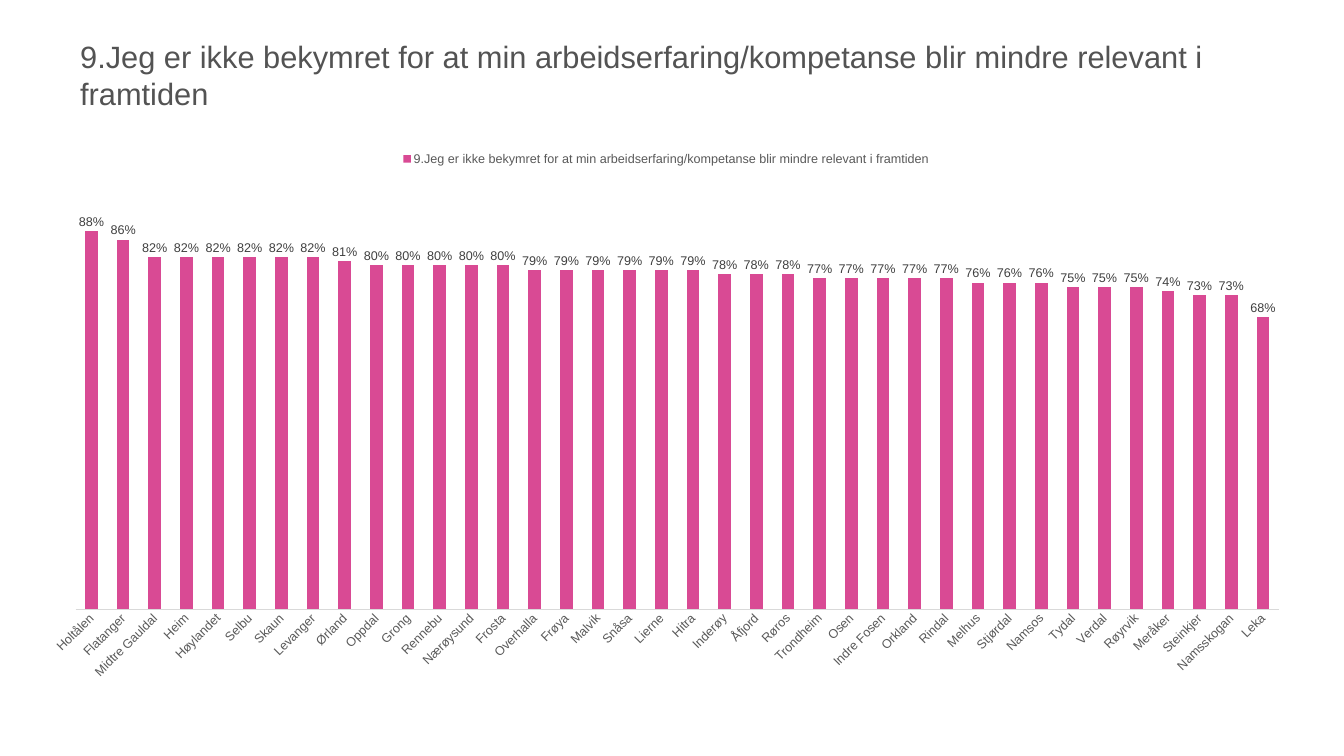
from pptx import Presentation
from pptx.chart.data import CategoryChartData
from pptx.dml.color import RGBColor
from pptx.enum.chart import (XL_CHART_TYPE, XL_LABEL_POSITION,
                             XL_LEGEND_POSITION, XL_TICK_MARK)
from pptx.enum.text import MSO_ANCHOR
from pptx.util import Inches, Pt

WIDTH, HEIGHT = 26.67, 15
COLORS = {"title": "535353", "text": "595959", "label": "404040",
          "axis": "D9D9D9", "bar": "D94A94", "base": "000000"}
TITLE = ("9.Jeg er ikke bekymret for at min arbeidserfaring/kompetanse "
         "blir mindre relevant i framtiden")
# Towns grouped by their share in percent
SHARES = {
    88: ["Holtålen"],
    86: ["Flatanger"],
    82: ["Midtre Gauldal", "Heim", "Høylandet", "Selbu", "Skaun", "Levanger"],
    81: ["Ørland"],
    80: ["Oppdal", "Grong", "Rennebu", "Nærøysund", "Frosta"],
    79: ["Overhalla", "Frøya", "Malvik", "Snåsa", "Lierne", "Hitra"],
    78: ["Inderøy", "Åfjord", "Røros"],
    77: ["Trondheim", "Osen", "Indre Fosen", "Orkland", "Rindal"],
    76: ["Melhus", "Stjørdal", "Namsos"],
    75: ["Tydal", "Verdal", "Røyrvik"],
    74: ["Meråker"],
    73: ["Steinkjer", "Namsskogan"],
    68: ["Leka"],
}


class Deck:
    face = "Arial"

    def __init__(self, slide):
        self.slide = slide

    def area(self, left, top, width, height):
        """Turn percentages of the slide's size into lengths."""
        return [Inches(part * size / 100) for part, size in
                zip((left, top, width, height), (WIDTH, HEIGHT) * 2)]

    def style(self, font, size, color):
        font.name, font.size = self.face, Pt(size)
        font.color.rgb = RGBColor.from_string(COLORS[color])

    def title(self, text, *area):
        frame = self.slide.shapes.add_textbox(*self.area(*area)).text_frame
        frame.word_wrap = True
        frame.vertical_anchor = MSO_ANCHOR.MIDDLE
        frame.margin_left = frame.margin_right = Inches(0.06)
        frame.margin_top = frame.margin_bottom = Inches(0.06)
        run = frame.paragraphs[0].add_run()
        run.text = text
        self.style(run.font, 44, "title")

    def columns(self, name, shares, *area):
        data = CategoryChartData(number_format="0%")
        pairs = [(town, share / 100) for share, towns in shares.items()
                 for town in towns]
        data.categories = [town for town, _ in pairs]
        data.add_series(name, [value for _, value in pairs])
        chart = self.slide.shapes.add_chart(
            XL_CHART_TYPE.COLUMN_CLUSTERED, *self.area(*area), data).chart
        self.style(chart.font, 18, "base")
        chart.has_title = False
        self.legend(chart)
        self.axes(chart)
        self.bars(chart.plots[0])

    def legend(self, chart):
        chart.has_legend = True
        chart.legend.position = XL_LEGEND_POSITION.TOP
        chart.legend.include_in_layout = False
        self.style(chart.legend.font, 18, "text")

    def axes(self, chart):
        towns, values = chart.category_axis, chart.value_axis
        towns.major_tick_mark = XL_TICK_MARK.NONE
        towns.format.line.width = Pt(0.75)
        towns.format.line.color.rgb = RGBColor.from_string(COLORS["axis"])
        self.style(towns.tick_labels.font, 18, "text")
        towns._element.txPr.bodyPr.set("rot", str(-45 * 60000))
        values.minimum_scale, values.maximum_scale = 0, 1
        values.has_major_gridlines = False
        values.tick_labels.number_format = "0%"
        values.tick_labels.number_format_is_linked = False
        values.visible = False

    def bars(self, plot):
        plot.vary_by_categories = False
        plot.gap_width, plot.overlap = 150, -25
        fill = plot.series[0].format.fill
        fill.solid()
        fill.fore_color.rgb = RGBColor.from_string(COLORS["bar"])
        labels = plot.series[0].data_labels
        labels.show_value = True
        labels.position = XL_LABEL_POSITION.OUTSIDE_END
        labels.number_format = "0%"
        labels.number_format_is_linked = False
        self.style(labels.font, 18, "label")


def main():
    show = Presentation()
    show.slide_width, show.slide_height = Inches(WIDTH), Inches(HEIGHT)
    deck = Deck(show.slides.add_slide(show.slide_layouts[6]))
    deck.title(TITLE, 5.74, 3.13, 92.16, 13.6)
    deck.columns(TITLE, SHARES, 2.1, 19.27, 94.94, 72)
    show.save("out.pptx")


if __name__ == "__main__":
    main()
